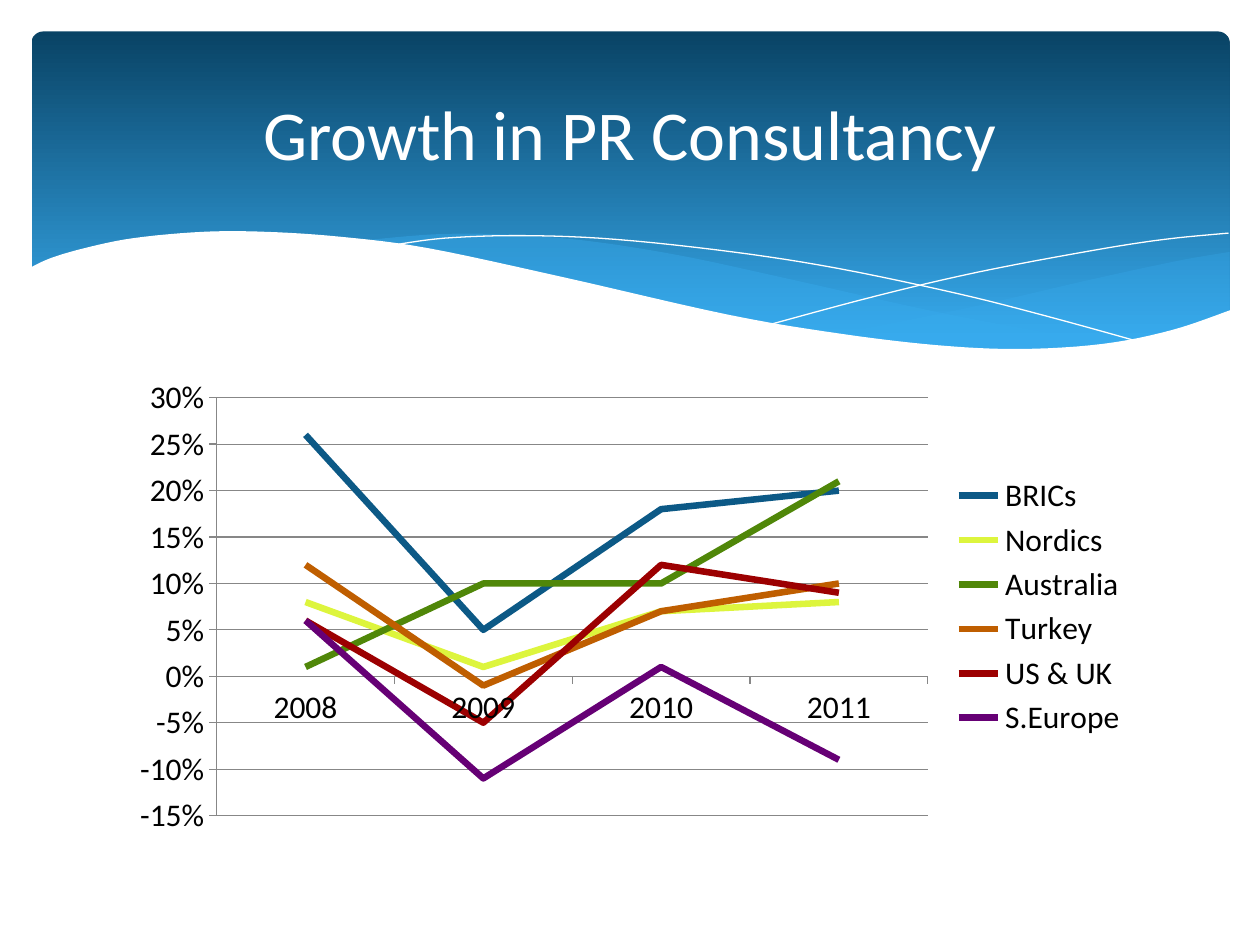
from lxml import etree
from pptx import Presentation
from pptx.chart.data import CategoryChartData
from pptx.dml.color import RGBColor
from pptx.enum.chart import XL_CHART_TYPE, XL_LEGEND_POSITION, XL_MARKER_STYLE, XL_TICK_MARK
from pptx.enum.shapes import MSO_SHAPE
from pptx.enum.text import MSO_ANCHOR, PP_ALIGN
from pptx.oxml.ns import qn
from pptx.util import Inches, Pt

LINE, RIGHT, NO_MARKER = XL_CHART_TYPE.LINE, XL_LEGEND_POSITION.RIGHT, XL_MARKER_STYLE.NONE
OUTSIDE = XL_TICK_MARK.OUTSIDE
ROUNDED = MSO_SHAPE.ROUNDED_RECTANGLE
CENTER, MIDDLE = PP_ALIGN.CENTER, MSO_ANCHOR.MIDDLE

FONT = "Calibri"
WHITE, BLACK = RGBColor(255, 255, 255), RGBColor(0, 0, 0)
NAVY, SKY = RGBColor(0x09, 0x43, 0x65), RGBColor(0x37, 0xAA, 0xED)
WAVE_BLUE = RGBColor(0x38, 0xAB, 0xED)
GRID = RGBColor(0x87, 0x87, 0x87)

# Knots of the wave curves, in inches
RIGHT_TOP = [(9.76, 2), (9.35, 2.07), (8.61, 2.23), (7.79, 2.42), (7.06, 2.57), (6.61, 2.65)]
RIGHT_BOTTOM = [(6.61, 2.65), (7.19, 2.72), (7.69, 2.77), (8.14, 2.78), (8.63, 2.75),
                (9.13, 2.67), (9.49, 2.57), (9.76, 2.47)]
MIDDLE_TOP = [(8.93, 2.73), (8.37, 2.65), (7.41, 2.47), (6.29, 2.22), (5.41, 2.03),
              (4.65, 1.91), (3.99, 1.86), (3.44, 1.86), (2.86, 1.91)]
MIDDLE_BOTTOM = [(2.86, 1.91), (3.62, 2.03), (4.49, 2.22), (5.66, 2.48), (6.5, 2.64),
                 (7.22, 2.74), (7.85, 2.78), (8.38, 2.78), (8.93, 2.73)]
FALLING_LINE = [(3.09, 1.95), (3.53, 1.89), (4.16, 1.87), (4.89, 1.9), (5.82, 2),
                (6.65, 2.13), (7.6, 2.33), (8.31, 2.51), (9.07, 2.72)]
RISING_LINE = [(6.13, 2.57), (6.95, 2.35), (7.76, 2.16), (8.66, 1.99), (9.24, 1.9), (9.75, 1.85)]
WHITE_TOP = [(9.77, 2.46), (9.3, 2.62), (8.75, 2.73), (8.09, 2.77), (7.44, 2.74), (6.68, 2.65),
             (5.79, 2.5), (4.47, 2.2), (3.4, 1.97), (2.71, 1.88), (2.11, 1.84), (1.61, 1.84),
             (1.06, 1.89), (0.67, 1.97), (0.4, 2.05), (0.23, 2.13)]

YEARS = ["2008", "2009", "2010", "2011"]
SERIES = [
    ("BRICs", (0.26, 0.05, 0.18, 0.2), RGBColor(0x0C, 0x59, 0x86)),
    ("Nordics", (0.08, 0.01, 0.07, 0.08), RGBColor(0xDD, 0xF5, 0x3D)),
    ("Australia", (0.01, 0.1, 0.1, 0.21), RGBColor(0x50, 0x87, 0x09)),
    ("Turkey", (0.12, -0.01, 0.07, 0.1), RGBColor(0xBF, 0x5E, 0x00)),
    ("US & UK", (0.06, -0.05, 0.12, 0.09), RGBColor(0x9C, 0x00, 0x01)),
    ("S.Europe", (0.06, -0.11, 0.01, -0.09), RGBColor(0x66, 0x00, 0x75)),
]


def set_attrs(obj, values):
    for name, value in values.items():
        setattr(obj, name, value)


def box(left, top, width, height):
    return [Inches(v) for v in (left, top, width, height)]


def curve(knots, steps=6):
    """Points of a smooth (Catmull-Rom) curve through the knots."""
    ends = [knots[0], *knots, knots[-1]]
    points = [knots[0]]
    for a, b, c, d in zip(ends, ends[1:], ends[2:], ends[3:]):
        for t in (i / steps for i in range(1, steps + 1)):
            points.append(tuple(
                (2 * q + (r - p) * t + (2 * p - 5 * q + 4 * r - w) * t ** 2
                 + (3 * q - p - 3 * r + w) * t ** 3) / 2
                for p, q, r, w in zip(a, b, c, d)))
    return points


def add_outline(s, points, close):
    emu = [(Inches(x), Inches(y)) for x, y in points]
    builder = s.shapes.build_freeform(*emu[0])
    builder.add_line_segments(emu[1:], close=close)
    sp = builder.convert_to_shape()
    sp.shadow.inherit = False
    return sp


def add_wave(s, points, color, opacity=100):
    sp = add_outline(s, points, True)
    sp.fill.solid()
    sp.fill.fore_color.rgb = color
    sp.line.fill.background()
    if opacity < 100:
        clr = sp.element.spPr.find(qn("a:solidFill"))[0]
        etree.SubElement(clr, qn("a:alpha"), val=str(opacity * 1000))


def add_wave_line(s, knots):
    sp = add_outline(s, curve(knots), False)
    sp.fill.background()
    sp.line.color.rgb = WHITE
    sp.line.width = Pt(0)


def add_banner(s):
    sp = s.shapes.add_shape(ROUNDED, *box(0.25, 0.25, 9.51, 2.7))
    sp.adjustments[0] = 0.034
    sp.shadow.inherit = False
    sp.line.fill.background()
    sp.fill.gradient()
    sp.fill.gradient_angle = 270
    for stop, color, position in zip(sp.fill.gradient_stops, (NAVY, SKY), (0, 0.9)):
        stop.color.rgb = color
        stop.position = position


def add_growth_chart(s):
    data = CategoryChartData(number_format="0%")
    data.categories = YEARS
    for name, values, _ in SERIES:
        data.add_series(name, values)
    chart = s.shapes.add_chart(LINE, *box(0.95, 2.93, 8.1, 3.77), data).chart
    set_attrs(chart, {"has_title": False, "has_legend": True})
    set_attrs(chart.font, {"name": FONT, "size": Pt(18)})
    chart.font.color.rgb = BLACK
    set_attrs(chart.legend, {"position": RIGHT, "include_in_layout": False})

    # Axes
    value_axis = chart.value_axis
    set_attrs(value_axis, {"minimum_scale": -0.15, "maximum_scale": 0.3, "major_unit": 0.05,
                           "has_major_gridlines": True})
    set_attrs(value_axis.tick_labels, {"number_format": "0%", "number_format_is_linked": False})
    for axis in (chart.category_axis, value_axis):
        axis.major_tick_mark = OUTSIDE
        axis.format.line.color.rgb = GRID
    value_axis.major_gridlines.format.line.color.rgb = GRID

    # Series lines
    plot = chart.plots[0]
    plot.vary_by_categories = False
    for series, (_, _, color) in zip(plot.series, SERIES):
        series.smooth = False
        series.marker.style = NO_MARKER
        series.format.line.width = Pt(3.75)
        series.format.line.color.rgb = color


def add_title(s, text):
    title = s.shapes.title
    set_attrs(title, dict(zip(("left", "top", "width", "height"), box(0.5, 0.37, 9, 1.37))))
    tf = title.text_frame
    set_attrs(tf, {"vertical_anchor": MIDDLE, "word_wrap": True})
    p = tf.paragraphs[0]
    p.alignment = CENTER
    r = p.add_run()
    r.text = text
    set_attrs(r.font, {"name": FONT, "size": Pt(40)})
    r.font.color.rgb = WHITE
    title.element.getparent().append(title.element)  # in front of the banner


def main():
    prs = Presentation()
    prs.slide_width, prs.slide_height = Inches(10), Inches(7.5)
    s = prs.slides.add_slide(prs.slide_layouts[5])

    # Banner with waves
    add_banner(s)
    add_wave(s, curve(RIGHT_TOP) + curve(RIGHT_BOTTOM), WAVE_BLUE, 29)
    add_wave(s, curve(MIDDLE_TOP) + curve(MIDDLE_BOTTOM), WAVE_BLUE, 40)
    for knots in (FALLING_LINE, RISING_LINE):
        add_wave_line(s, knots)
    add_wave(s, curve(WHITE_TOP) + [(0.23, 3.29), (9.77, 3.29)], WHITE)

    # Content
    add_growth_chart(s)
    add_title(s, "Growth in PR Consultancy")
    prs.save("out.pptx")


if __name__ == "__main__":
    main()
